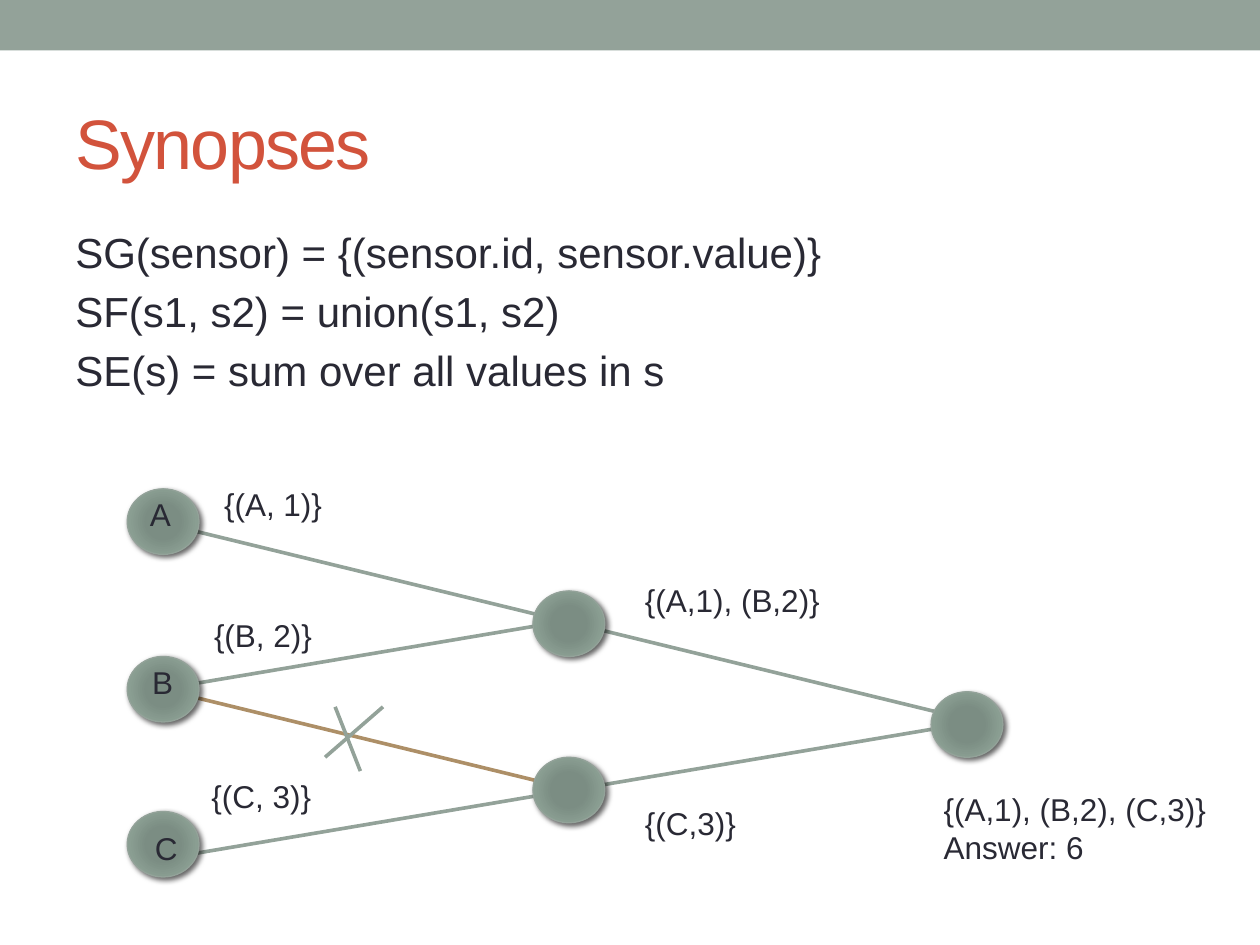
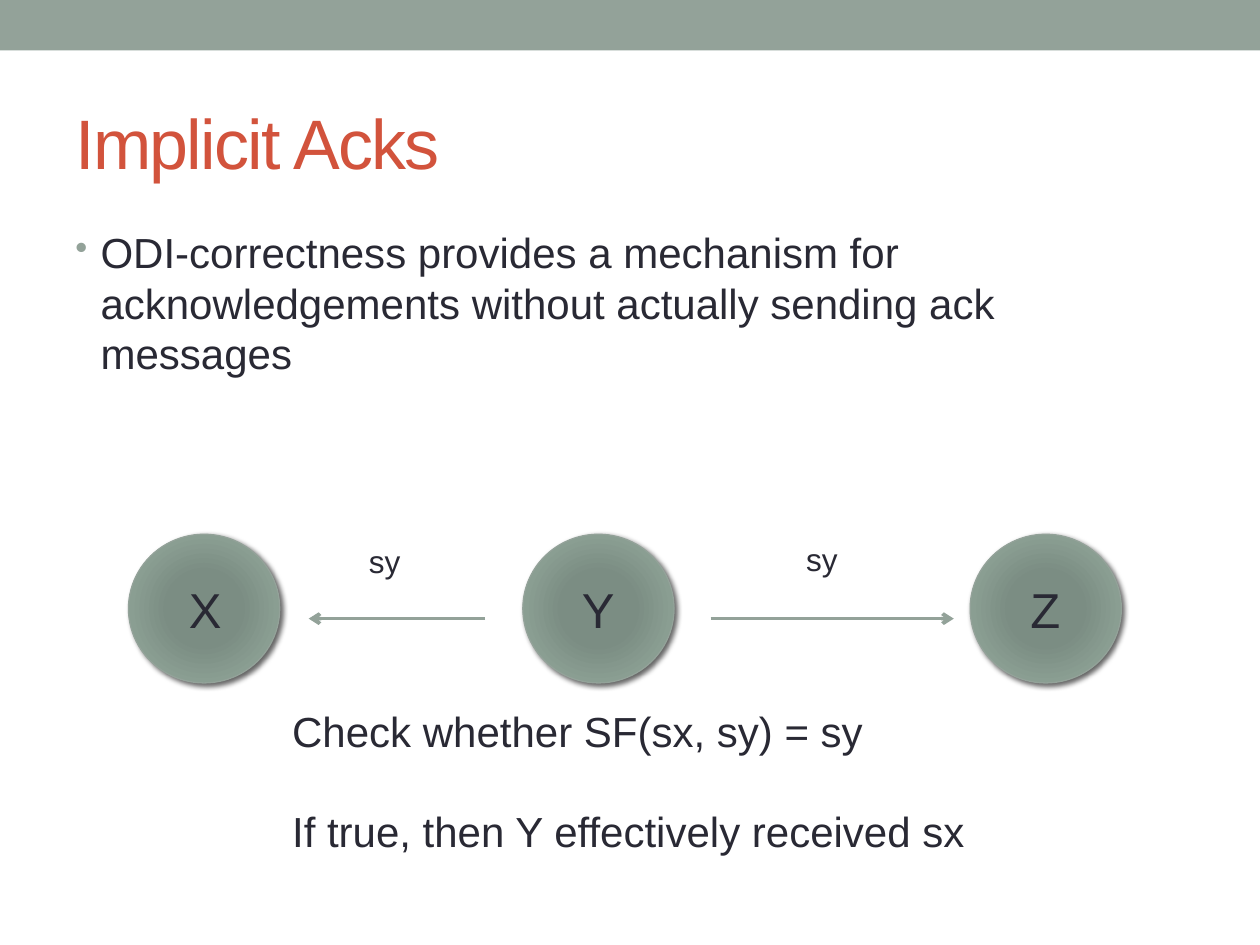
from pptx import Presentation
from pptx.dml.color import RGBColor
from pptx.enum.shapes import MSO_CONNECTOR, MSO_SHAPE
from pptx.enum.text import MSO_ANCHOR, MSO_AUTO_SIZE, PP_ALIGN
from pptx.oxml import parse_xml
from pptx.oxml.ns import nsdecls
from pptx.util import Inches, Pt

SAGE = RGBColor(0x93, 0xA2, 0x99)
TAN = RGBColor(0xAD, 0x8F, 0x67)
RUST = RGBColor(0xD2, 0x53, 0x3C)
INK = RGBColor(0x29, 0x29, 0x34)
FONT = "Arial"
STOPS = [(0, "7B8E82"), (34, "7B8D83"), (70, "8A9E92"), (100, "93A299")]
BODY = (0.5, 1.75, 9, 5.33)

RULES = [
    "SG(sensor) = {(sensor.id, sensor.value)}",
    "SF(s1, s2) = union(s1, s2)",
    "SE(s) = sum over all values in s",
]
SPAN, DOWN, UP = 3.2, 0.78, -0.54
LINKS = [
    (1.28, 5.47, UP, SAGE),
    (1.28, 5.47, DOWN, TAN),
    (1.45, 6.79, UP, SAGE),
    (4.48, 6.28, UP, SAGE),
    (4.48, 4.93, DOWN, SAGE),
    (1.28, 4.15, DOWN, SAGE),
]
NODES = [(1.01, 5.21), (4.23, 4.69), (4.23, 6.01),
         (1.01, 6.44), (1.01, 3.88), (7.39, 5.49)]
SETS = [
    (["A"], 1.09, 3.88, 0.38),
    (["B"], 1.11, 5.21, 0.37),
    (["C"], 1.13, 6.53, 0.38),
    (["{(A, 1)}"], 1.68, 3.8, 0.99),
    (["{(B, 2)}"], 1.6, 4.84, 0.99),
    (["{(C, 3)}"], 1.58, 6.12, 1),
    (["{(A,1), (B,2)}"], 5.02, 4.56, 1.6),
    (["{(C,3)}"], 5.02, 6.33, 0.93),
    (["{(A,1), (B,2), (C,3)}", "Answer: 6"], 7.39, 6.22, 2.31),
]
CROSS = [(2.66, 5.61, 2.86, 6.12), (2.58, 6.01, 3.04, 5.61)]

CLAIM = ["ODI-correctness provides a mechanism for acknowledgements "
         "without actually sending ack messages"]
PEERS = [("Y", 4.15, 4.52, 0.46), ("X", 1.02, 1.4, 0.47), ("Z", 7.7, 8.08, 0.44)]
SENDS = [(3.85, 2.45), (5.64, 7.57)]
TAGS = [(6.3, 4.24), (2.83, 4.25)]
CHECK = ["Check whether SF(sx, sy) = sy", "If true, then Y effectively received sx"]


def write(frame, lines, size=18, color=INK, gap=0, first=0, track=0, bullet=False):
    for num, line in enumerate(lines):
        para = frame.paragraphs[0] if num == 0 else frame.add_paragraph()
        para.alignment = PP_ALIGN.LEFT
        para.space_before = Pt(gap if num else first)
        run = para.add_run()
        run.text = line
        run.font.name, run.font.size = FONT, Pt(size)
        run.font.color.rgb = color
        if track:
            run.font._element.set("spc", str(track * 100))
        if bullet:
            props = para._p.get_or_add_pPr()
            props.set("marL", str(Inches(0.2)))
            props.set("indent", str(Inches(-0.2)))
            for mark in (f'<a:buClr {nsdecls("a")}><a:srgbClr val="{SAGE}"/></a:buClr>',
                         f'<a:buSzPct {nsdecls("a")} val="85000"/>',
                         f'<a:buChar {nsdecls("a")} char="•"/>'):
                props.append(parse_xml(mark))


def label(slide, lines, box, wrap=False, **style):
    frame = slide.shapes.add_textbox(*map(Inches, box)).text_frame
    frame.word_wrap = wrap
    frame.auto_size = MSO_AUTO_SIZE.NONE if wrap else MSO_AUTO_SIZE.SHAPE_TO_FIT_TEXT
    write(frame, lines, **style)


def link(slide, ends, color=SAGE, arrow=False):
    line = slide.shapes.add_connector(MSO_CONNECTOR.STRAIGHT, *map(Inches, ends))
    line.line.color.rgb, line.line.width = color, Pt(2.08)
    line._element.spPr.append(parse_xml(f'<a:effectLst {nsdecls("a")}/>'))
    if arrow:
        line.line._get_or_add_ln().append(
            parse_xml(f'<a:tailEnd {nsdecls("a")} type="arrow"/>'))


def node(slide, box):
    ball = slide.shapes.add_shape(MSO_SHAPE.OVAL, *map(Inches, box))
    ball.line.color.rgb, ball.line.width = SAGE, Pt(0.75)
    stops = "".join(f'<a:gs pos="{pos * 1000}"><a:srgbClr val="{tone}"/></a:gs>'
                    for pos, tone in STOPS)
    props = ball._element.spPr
    props.prstGeom.addnext(parse_xml(
        f'<a:gradFill {nsdecls("a")}><a:gsLst>{stops}</a:gsLst><a:path path="circle">'
        '<a:fillToRect l="100000" t="100000" r="100000" b="100000"/></a:path></a:gradFill>'))
    props.append(parse_xml(
        f'<a:effectLst {nsdecls("a")}><a:outerShdw blurRad="{Pt(3)}" dist="{Pt(2)}" '
        'dir="2700000" rotWithShape="0"><a:srgbClr val="000000"><a:alpha val="60000"/>'
        '</a:srgbClr></a:outerShdw></a:effectLst>'))


def start(deck, name):
    slide = deck.slides.add_slide(deck.slide_layouts[5])
    band = slide.shapes.add_shape(MSO_SHAPE.RECTANGLE, 0, 0, deck.slide_width, Inches(0.4))
    band.shadow.inherit = False
    band.fill.solid()
    band.fill.fore_color.rgb = SAGE
    band.line.fill.background()
    title = slide.shapes.title
    title.left, title.top, title.width, title.height = map(Inches, (0.5, 0.58, 9, 1.08))
    frame = title.text_frame
    frame.vertical_anchor = MSO_ANCHOR.MIDDLE
    frame.auto_size = MSO_AUTO_SIZE.NONE
    write(frame, [name], size=40, color=RUST, track=-1)
    return slide


def merge(deck):
    slide = start(deck, "Synopses")
    label(slide, RULES, BODY, wrap=True, size=24, gap=4.8, first=4.8)
    for left, top, rise, color in LINKS:
        link(slide, (left, top, left + SPAN, top + rise), color)
    for spot in NODES:
        node(slide, (*spot, 0.57, 0.52))
    for lines, left, top, width in SETS:
        label(slide, lines, (left, top, width, 0.1 + 0.3 * len(lines)))
    for ends in CROSS:
        link(slide, ends)


def acks(deck):
    slide = start(deck, "Implicit Acks")
    label(slide, CLAIM, BODY, wrap=True, size=24, first=4.8, bullet=True)
    for name, left, inner, width in PEERS:
        node(slide, (left, 4.24, 1.2, 1.18))
        label(slide, [name], (inner, 4.55, width, 0.57), size=28)
    for tail, head in SENDS:
        link(slide, (tail, 4.91, head, 4.91), arrow=True)
    for spot in TAGS:
        label(slide, ["sy"], (*spot, 0.45, 0.4))
    label(slide, CHECK, (2.22, 5.55, 5.59, 1.31), size=24, gap=28.5)


def main():
    deck = Presentation()
    deck.slide_width, deck.slide_height = Inches(10), Inches(7.5)
    merge(deck)
    acks(deck)
    deck.save("out.pptx")


if __name__ == "__main__":
    main()
